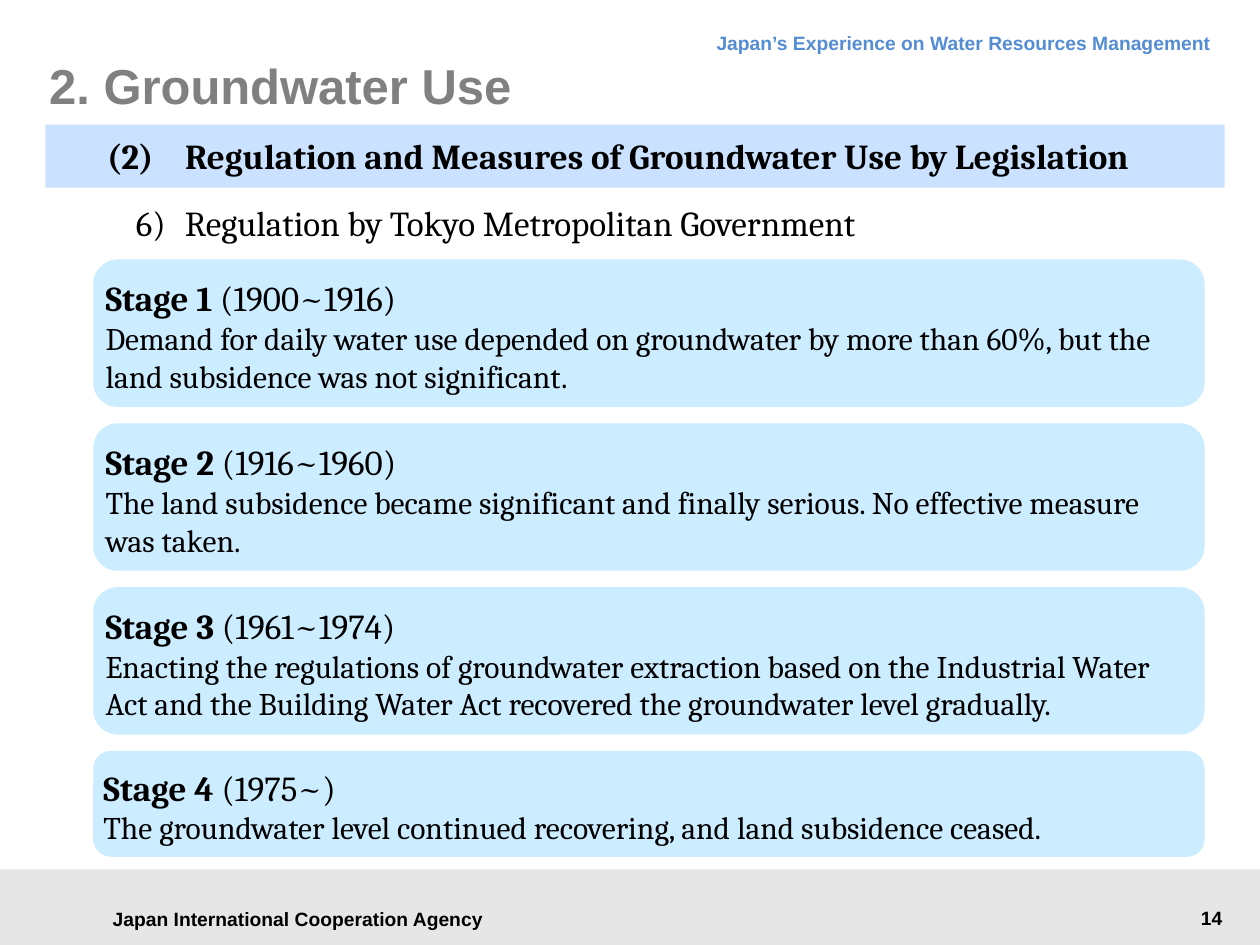
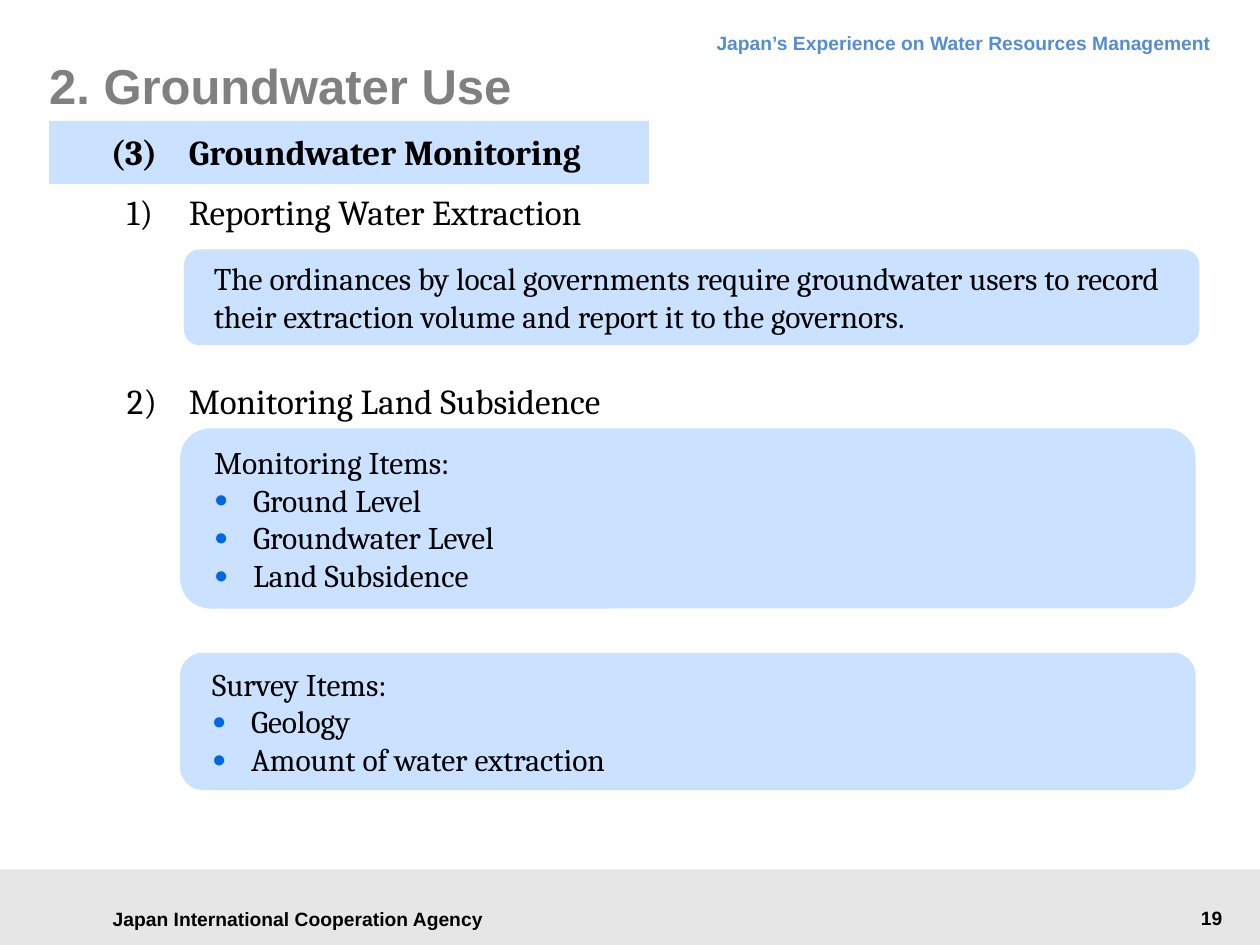
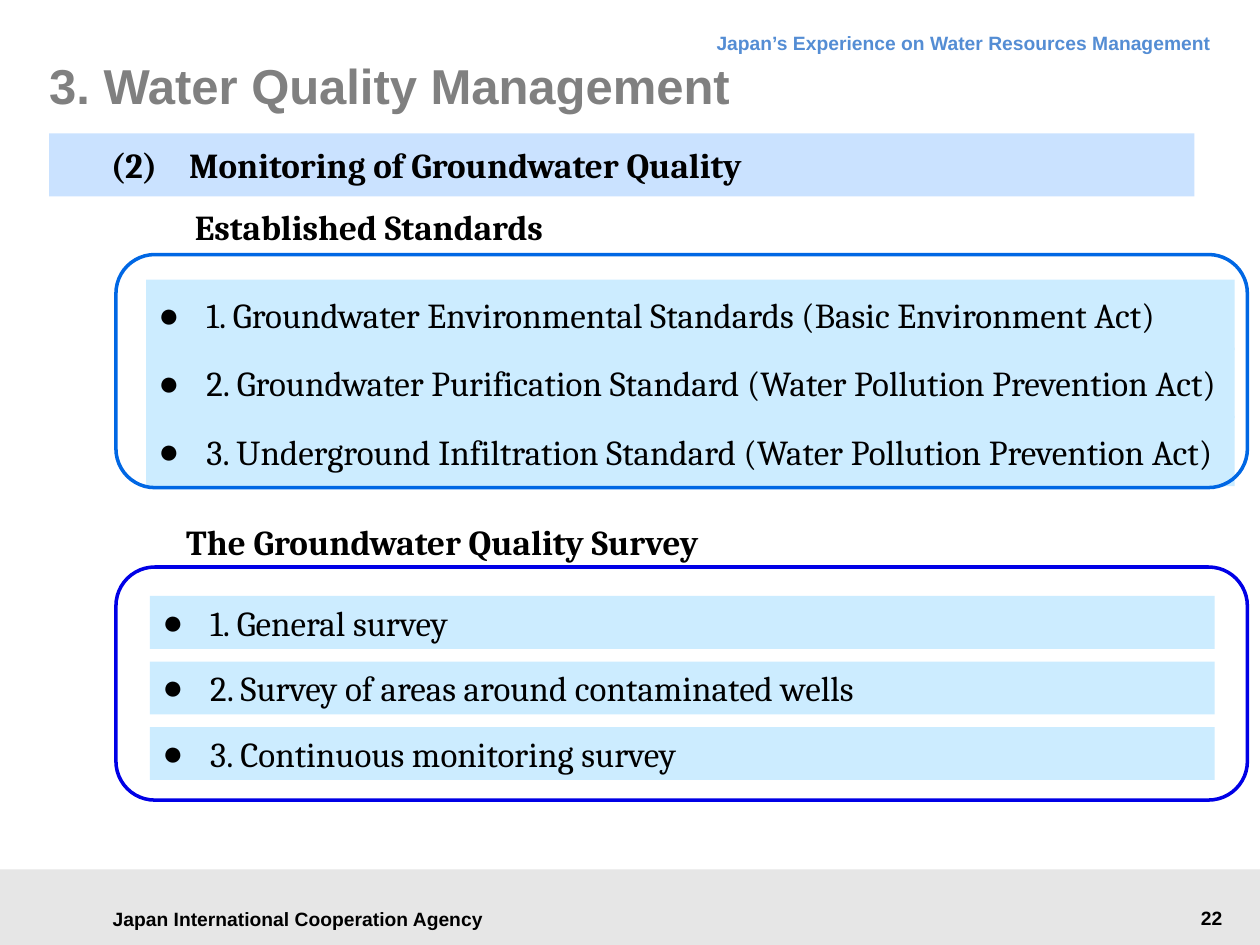
from dataclasses import dataclass

from lxml import etree
from pptx import Presentation
from pptx.dml.color import RGBColor
from pptx.enum.shapes import MSO_SHAPE
from pptx.enum.text import MSO_ANCHOR, PP_ALIGN
from pptx.oxml.ns import qn
from pptx.util import Inches, Pt

RECTANGLE, ROUNDED = MSO_SHAPE.RECTANGLE, MSO_SHAPE.ROUNDED_RECTANGLE
TOP, MIDDLE = MSO_ANCHOR.TOP, MSO_ANCHOR.MIDDLE
LEFT, CENTER, RIGHT = PP_ALIGN.LEFT, PP_ALIGN.CENTER, PP_ALIGN.RIGHT


@dataclass(frozen=True)
class Theme:
    heading_font: str = "Arial"
    body_font: str = "Cambria"
    ink: str = "000000"
    title: str = "808080"
    running_head: str = "548DD4"
    footer: str = "E6E6E6"
    band: str = "CAE2FF"
    card: str = "CCECFF"
    accent: str = "0067E4"
    deep_accent: str = "0000E6"
    title_size: int = 28
    head_size: int = 20
    body_size: int = 18
    small_size: int = 11


THEME = Theme()

RUNNING_HEAD = "Japan’s Experience on Water Resources Management"
AGENCY = "Japan International Cooperation Agency"

TOKYO_RULE = "6)\tRegulation by Tokyo Metropolitan Government"
STAGES = [
    ("Stage 1 ", "(1900~1916)",
     "Demand for daily water use depended on groundwater by more than 60%, "
     "but the land subsidence was not significant."),
    ("Stage 2 ", "(1916~1960)",
     "The land subsidence became significant and finally serious. "
     "No effective measure was taken."),
    ("Stage 3 ", "(1961~1974)",
     "Enacting the regulations of groundwater extraction based on the Industrial Water Act "
     "and the Building Water Act recovered the groundwater level gradually."),
    ("Stage 4 ", "(1975~)",
     "The groundwater level continued recovering, and land subsidence ceased."),
]
STAGE_HEIGHTS = [1.17, 1.17, 1.17, 0.84]

# Text, top
MONITORING_HEADS = [
    ("1)\tReporting Water Extraction", 1.46),
    ("2)\tMonitoring Land Subsidence", 2.96),
]
# Lead, bullets, left, top, height
MONITORING_CARDS = [
    ("The ordinances by local governments require groundwater users to record "
     "their extraction volume and report it to the governors.", [], 1.46, 1.98, 0.76),
    ("Monitoring Items:", ["Ground Level", "Groundwater Level", "Land Subsidence"],
     1.43, 3.4, 1.43),
    ("Survey Items:", ["Geology", "Amount of water extraction"], 1.43, 5.18, 1.09),
]

QUALITY_GROUPS = [
    dict(heading="Established Standards", heading_box=(1.38, 1.64, 3.1, 0.38), align=CENTER,
         items=["1. Groundwater Environmental Standards (Basic Environment Act)",
                "2. Groundwater Purification Standard (Water Pollution Prevention Act)",
                "3. Underground Infiltration Standard (Water Pollution Prevention Act)"],
         first_row=(1.16, 2.22, 8.64, 0.56), step=0.54,
         frame_top=2.02, frame_color=THEME.accent),
    dict(heading="The Groundwater Quality Survey", heading_box=(1.38, 4.14, 4.47, 0.38),
         align=LEFT,
         items=["1. General survey",
                "2. Survey of areas around contaminated wells",
                "3. Continuous monitoring survey"],
         first_row=(1.19, 4.73, 8.45, 0.42), step=0.52,
         frame_top=4.5, frame_color=THEME.deep_accent),
]


def rgb(color):
    return RGBColor.from_string(color)


def add_box(page, at, shape=None, fill=None, line=None, anchor=TOP,
            insets=(0.1, 0.05, 0.1, 0.05)):
    """Add a preset shape, or a text box when no shape is given."""
    place = [Inches(value) for value in at]
    if shape is None:
        box = page.shapes.add_textbox(*place)
    else:
        box = page.shapes.add_shape(shape, *place)
        box.shadow.inherit = False
        if fill:
            box.fill.solid()
            box.fill.fore_color.rgb = rgb(fill)
        else:
            box.fill.background()
        if line:
            box.line.color.rgb = rgb(line)
            box.line.width = Pt(2)
        else:
            box.line.fill.background()
    frame = box.text_frame
    frame.word_wrap = True
    frame.vertical_anchor = anchor
    (frame.margin_left, frame.margin_top,
     frame.margin_right, frame.margin_bottom) = [Inches(value) for value in insets]
    return box


def add_para(box, *spans, align=LEFT, hang=0, margin=None, spacing=None,
             bullet=False, bullet_color=None, bullet_percent=100):
    """Append a paragraph; each span is (text, size, bold, color, font), the last two optional."""
    frame = box.text_frame
    para = frame.paragraphs[0]
    if para.runs:
        para = frame.add_paragraph()
    para.alignment = align
    if spacing:
        para.line_spacing = Pt(spacing)
    properties = para._p.get_or_add_pPr()
    if hang:
        properties.set("marL", str(Inches(hang if margin is None else margin)))
        properties.set("indent", str(-Inches(hang)))
    if bullet:
        if bullet_color:
            color = etree.SubElement(properties, qn("a:buClr"))
            etree.SubElement(color, qn("a:srgbClr"), val=bullet_color)
        etree.SubElement(properties, qn("a:buSzPct"), val=str(bullet_percent * 1000))
        etree.SubElement(properties, qn("a:buFont"), typeface=THEME.heading_font)
        etree.SubElement(properties, qn("a:buChar"), char="●")
    for text, size, bold, *style in spans:
        color, font = style or (THEME.ink, THEME.body_font)
        span = para.add_run()
        span.text = text
        span.font.size = Pt(size)
        span.font.bold = bold
        span.font.color.rgb = rgb(color)
        span.font.name = font


def add_page(deck, title, number, band_text, band_at):
    """Add a slide with the shared header, footer, title and section band."""
    page = deck.slides.add_slide(deck.slide_layouts[6])
    add_box(page, (0, 6.9, 10, 0.6), RECTANGLE, THEME.footer)
    small = (THEME.small_size, True)
    add_para(add_box(page, (0.71, 7.12, 3.31, 0.34), anchor=MIDDLE),
             (AGENCY, *small, THEME.ink, THEME.heading_font), align=CENTER)
    add_para(add_box(page, (2.72, 0.13, 6.99, 0.38)),
             (RUNNING_HEAD, *small, THEME.running_head, THEME.heading_font),
             align=RIGHT, spacing=18)
    add_para(add_box(page, (8.23, 7.14, 1.57, 0.29)),
             (str(number), *small, THEME.ink, THEME.heading_font), align=RIGHT)
    add_para(add_box(page, (0.39, 0.28, 9.49, 0.79), anchor=MIDDLE, insets=(0, 0, 0, 0)),
             (title, THEME.title_size, True, THEME.title, THEME.heading_font))
    band = add_box(page, band_at, RECTANGLE, THEME.band, insets=(0.43, 0.08, 0.35, 0.08))
    add_para(band, (band_text, THEME.head_size, True), hang=0.62, margin=0.68)
    return page


def add_regulation_page(deck):
    page = add_page(deck, "2. Groundwater Use", 14,
                    "(2)\tRegulation and Measures of Groundwater Use by Legislation",
                    (0.36, 0.99, 9.36, 0.5))
    add_para(add_box(page, (0.98, 1.55, 8.74, 0.44)),
             (TOKYO_RULE, THEME.head_size, False), hang=0.39)
    top, gap = 2.06, 0.13
    for (stage, years, summary), height in zip(STAGES, STAGE_HEIGHTS):
        card = add_box(page, (0.74, top, 8.82, height), ROUNDED, THEME.card,
                       anchor=MIDDLE, insets=(0.04, 0.08, 0.04, 0.04))
        add_para(card, (stage, THEME.head_size, True), (years, THEME.head_size, False))
        add_para(card, (summary, THEME.body_size, False))
        top += height + gap


def add_monitoring_page(deck):
    page = add_page(deck, "2. Groundwater Use", 19, "(3)\tGroundwater Monitoring",
                    (0.39, 0.96, 4.76, 0.5))
    for text, top in MONITORING_HEADS:
        add_para(add_box(page, (0.91, top, 4.13, 0.44)),
                 (text, THEME.head_size, False), hang=0.49)
    for lead, bullets, left, top, height in MONITORING_CARDS:
        card = add_box(page, (left, top, 8.06, height), ROUNDED, THEME.band,
                       anchor=MIDDLE, insets=(0.2, 0.04, 0.12, 0.04))
        add_para(card, (lead, THEME.body_size, False))
        for text in bullets:
            add_para(card, (text, THEME.body_size, False), hang=0.31,
                     bullet=True, bullet_color=THEME.accent, bullet_percent=75)


def add_quality_page(deck):
    page = add_page(deck, "3. Water Quality Management", 22,
                    "(2)\tMonitoring of Groundwater Quality", (0.39, 1.06, 9.09, 0.5))
    for group in QUALITY_GROUPS:
        add_para(add_box(page, group["heading_box"]),
                 (group["heading"], THEME.head_size, True), align=group["align"], spacing=20)
        left, top, width, height = group["first_row"]
        for index, text in enumerate(group["items"]):
            row = add_box(page, (left, top + index * group["step"], width, height),
                          RECTANGLE, THEME.card, anchor=MIDDLE)
            add_para(row, (text, THEME.head_size, False), hang=0.38, bullet=True)
        add_box(page, (0.92, group["frame_top"], 8.98, 1.85), ROUNDED,
                line=group["frame_color"])


def main():
    deck = Presentation()
    deck.slide_width, deck.slide_height = Inches(10), Inches(7.5)
    add_regulation_page(deck)
    add_monitoring_page(deck)
    add_quality_page(deck)
    deck.save("out.pptx")


if __name__ == "__main__":
    main()
